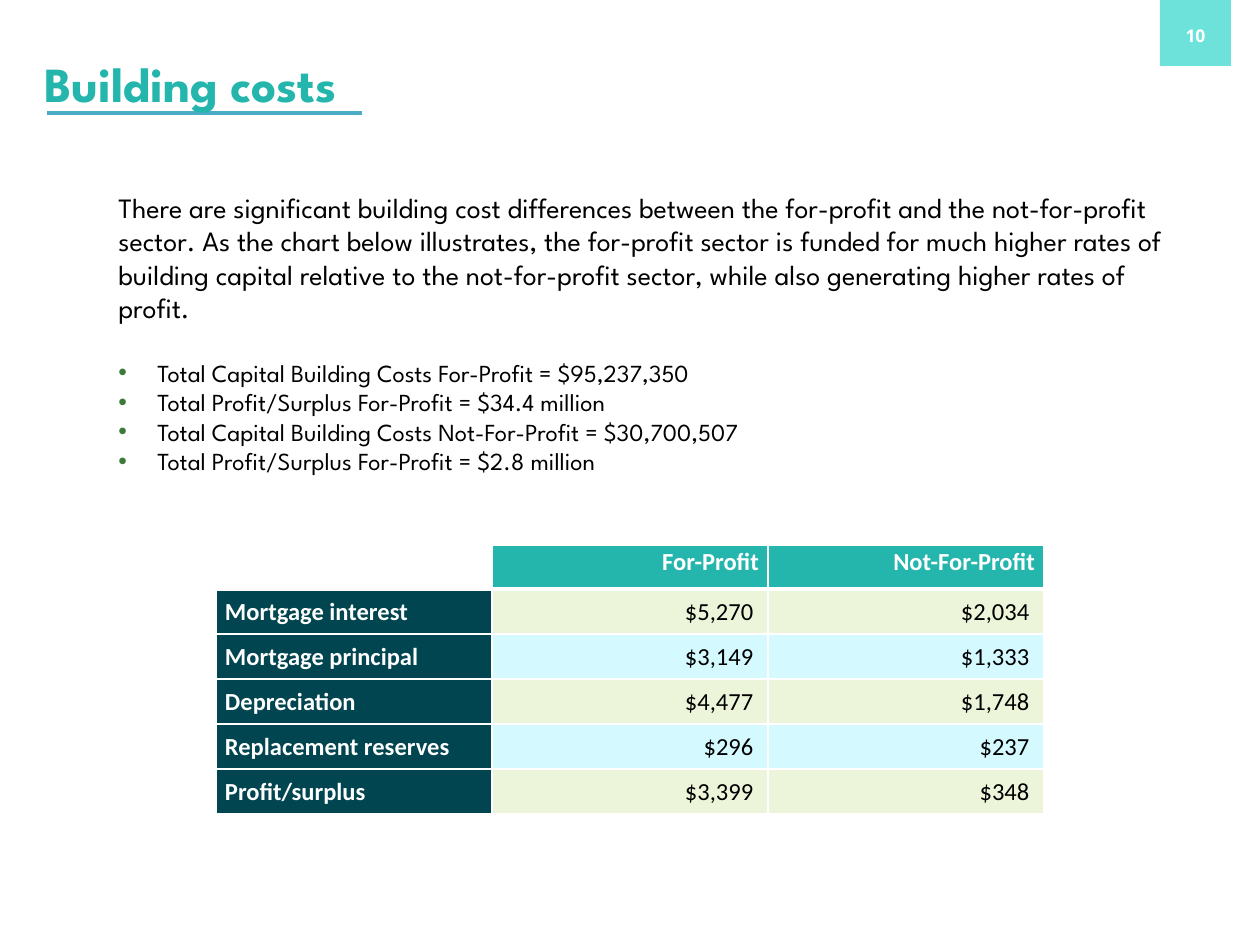
from dataclasses import dataclass

from lxml.etree import SubElement
from pptx import Presentation
from pptx.dml.color import RGBColor
from pptx.enum.shapes import MSO_CONNECTOR as Connector, MSO_SHAPE as Shape
from pptx.enum.text import MSO_ANCHOR as Anchor, MSO_AUTO_SIZE as AutoSize, PP_ALIGN as Align
from pptx.oxml import parse_xml
from pptx.oxml.ns import nsdecls, qn
from pptx.util import Emu, Pt

COLORS = {
    "teal": "24B5AC", "badge": "6CE2DB", "rule": "4BACC6", "bullet": "3D7A3A",
    "label": "00454F", "green": "ECF5D9", "blue": "D4FAFF",
    "white": "FFFFFF", "black": "000000",
}
HEADING_FONT = "League Spartan"
INDENT = 39


@dataclass
class Box:
    left: int
    top: int
    width: int
    height: int


@dataclass
class Style:
    font: str
    size: int
    color: str
    bold: bool = False
    align: Align = Align.LEFT


@dataclass
class CostRow:
    label: str
    for_profit: str
    not_for_profit: str


INTRO = (
    "There are significant building cost differences between the for-profit and the "
    "not-for-profit sector. As the chart below illustrates, the for-profit sector is funded "
    "for much higher rates of building capital relative to the not-for-profit sector, while "
    "also generating higher rates of profit."
)
TOTALS = [
    "Total Capital Building Costs For-Profit = $95,237,350",
    "Total Profit/Surplus For-Profit = $34.4 million",
    "Total Capital Building Costs Not-For-Profit = $30,700,507",
    "Total Profit/Surplus For-Profit = $2.8 million",
]
COSTS = [
    CostRow("Mortgage interest", "$5,270", "$2,034"),
    CostRow("Mortgage principal", "$3,149", "$1,333"),
    CostRow("Depreciation", "$4,477", "$1,748"),
    CostRow("Replacement reserves", "$296", "$237"),
    CostRow("Profit/surplus", "$3,399", "$348"),
]


def px(length: int) -> Emu:
    return Emu(round(length * 914400 / 126))


def place(box: Box) -> tuple[Emu, ...]:
    return px(box.left), px(box.top), px(box.width), px(box.height)


def rgb(name: str) -> RGBColor:
    return RGBColor.from_string(COLORS[name])


def write(para, text: str, style: Style) -> None:
    para.text = text
    para.alignment = style.align
    para.font.name, para.font.size = style.font, Pt(style.size)
    para.font.bold = style.bold
    para.font.color.rgb = rgb(style.color)


def add_bullet(para) -> None:
    props = para._p.get_or_add_pPr()
    props.set("marL", str(px(INDENT)))
    props.set("indent", str(-px(INDENT)))
    color = parse_xml(f'<a:buClr {nsdecls("a")}><a:srgbClr val="{COLORS["bullet"]}"/></a:buClr>')
    font = parse_xml(f'<a:buFont {nsdecls("a")} typeface="Arial"/>')
    mark = parse_xml(f'<a:buChar {nsdecls("a")} char="•"/>')
    for offset, node in enumerate((color, font, mark)):
        props.insert(offset, node)


def add_badge(page, box: Box, text: str) -> None:
    badge = page.shapes.add_shape(Shape.RECTANGLE, *place(box))
    badge.shadow.inherit = False
    badge.fill.solid()
    badge.fill.fore_color.rgb = rgb("badge")
    badge.line.fill.background()
    frame = badge.text_frame
    frame.vertical_anchor = Anchor.MIDDLE
    frame.margin_top, frame.margin_bottom = px(30), 0
    write(frame.paragraphs[0], text, Style("Open Sans", 10, "white", True, Align.CENTER))


def add_rule(page, left: int, right: int, top: int) -> None:
    rule = page.shapes.add_connector(Connector.STRAIGHT, px(left), px(top), px(right), px(top))
    rule.line.color.rgb = rgb("rule")
    rule.line.width = Pt(2)
    SubElement(rule._element.spPr, qn("a:effectLst"))


def add_text_box(page, box: Box):
    frame = page.shapes.add_textbox(*place(box)).text_frame
    frame.word_wrap = True
    return frame


def set_borders(cell, bottom: int) -> None:
    props = cell._tc.get_or_add_tcPr()
    for offset, (side, width) in enumerate({"L": 1, "R": 1, "T": 1, "B": bottom}.items()):
        props.insert(offset, parse_xml(
            f'<a:ln{side} {nsdecls("a")} w="{Pt(width)}"><a:solidFill>'
            f'<a:srgbClr val="{COLORS["white"]}"/></a:solidFill></a:ln{side}>'))


def fill_cell(cell, text: str, style: Style, fill: str | None, header: bool) -> None:
    cell.margin_left = cell.margin_right = px(9)
    cell.margin_top = cell.margin_bottom = 0
    cell.vertical_anchor = Anchor.TOP if header else Anchor.MIDDLE
    para = cell.text_frame.paragraphs[0]
    write(para, text, style)
    para.line_spacing, para.space_after = 1.07, Pt(8)
    if fill:
        cell.fill.solid()
        cell.fill.fore_color.rgb = rgb(fill)
    else:
        cell.fill.background()
    set_borders(cell, 3 if header else 1)


def add_cost_table(page, box: Box, costs: list[CostRow]) -> None:
    table = page.shapes.add_table(len(costs) + 1, 3, *place(box)).table
    for column in table.columns:
        column.width = px(box.width // 3)
    for index, row in enumerate(table.rows):
        row.height = px(45 if index else 44)

    heading = Style("Calibri", 14, "white", True, Align.RIGHT)
    label = Style("Calibri", 14, "white", True)
    value = Style("Calibri", 14, "black", align=Align.RIGHT)
    for column, text in enumerate(("", "For-Profit", "Not-For-Profit")):
        fill_cell(table.cell(0, column), text, heading, "teal" if text else None, True)
    for index, cost in enumerate(costs, 1):
        band = "green" if index % 2 else "blue"
        fill_cell(table.cell(index, 0), cost.label, label, "label", False)
        for column, amount in enumerate((cost.for_profit, cost.not_for_profit), 1):
            fill_cell(table.cell(index, column), f" {amount} ", value, band, False)


def main() -> None:
    deck = Presentation()
    deck.slide_width, deck.slide_height = px(1260), px(945)
    page = deck.slides.add_slide(deck.slide_layouts[6])

    # Page number and title
    add_badge(page, Box(1160, -24, 71, 90), "10")
    add_rule(page, 47, 362, 113)
    title = add_text_box(page, Box(32, 47, 1017, 71))
    title.vertical_anchor = Anchor.MIDDLE
    write(title.paragraphs[0], "Building costs", Style(HEADING_FONT, 28, "teal", True))

    # Introduction and totals
    body = add_text_box(page, Box(106, 184, 1100, 301))
    body.auto_size = AutoSize.SHAPE_TO_FIT_TEXT
    intro = body.paragraphs[0]
    write(intro, INTRO, Style(HEADING_FONT, 16, "black"))
    intro.space_after = Pt(19)
    for total in TOTALS:
        para = body.add_paragraph()
        write(para, total, Style(HEADING_FONT, 14, "black"))
        add_bullet(para)

    # Cost comparison
    add_cost_table(page, Box(216, 545, 828, 269), COSTS)
    deck.save("out.pptx")


if __name__ == "__main__":
    main()
